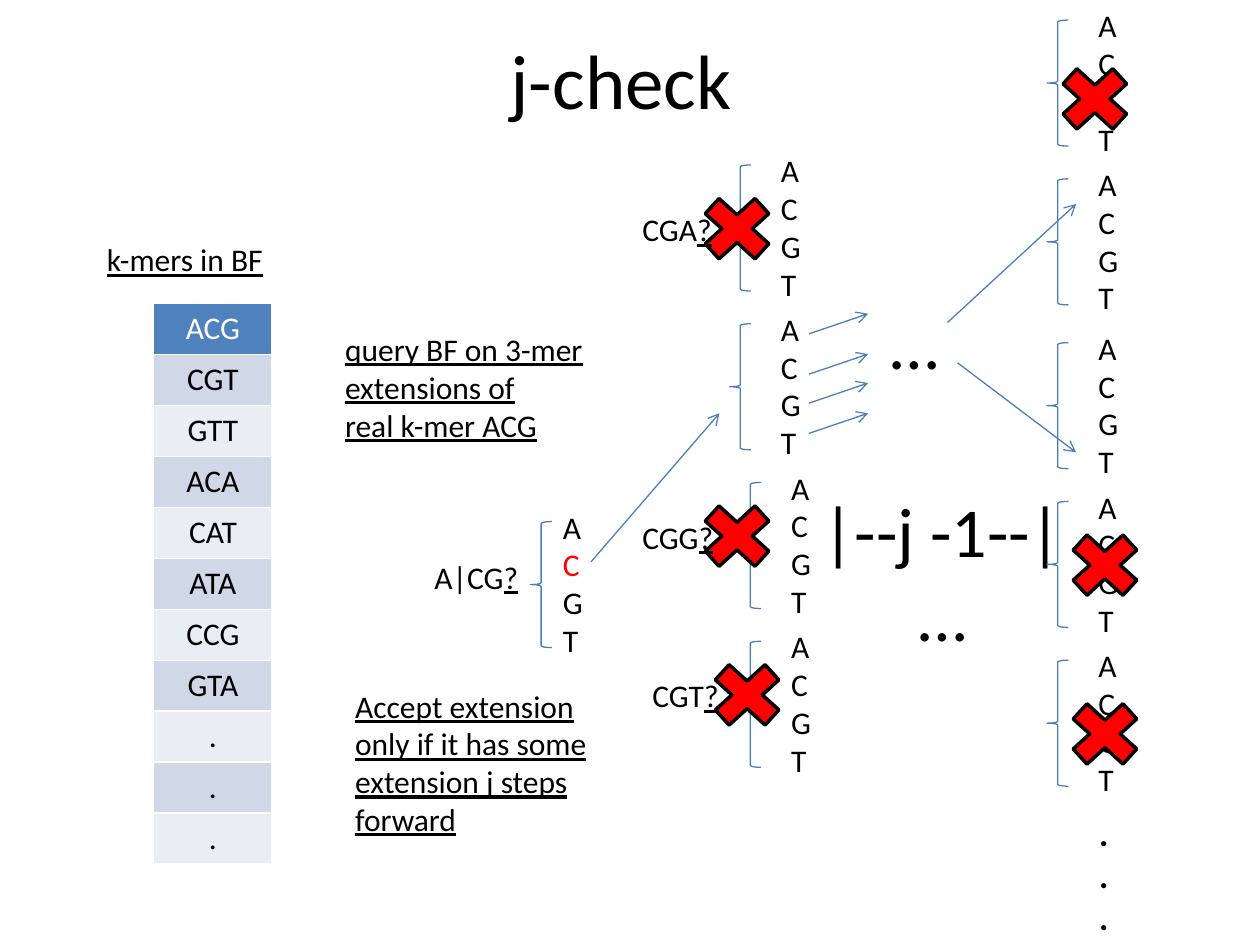
from lxml.etree import SubElement
from pptx import Presentation
from pptx.dml.color import RGBColor
from pptx.enum.shapes import MSO_CONNECTOR, MSO_SHAPE
from pptx.enum.text import MSO_ANCHOR, MSO_AUTO_SIZE, PP_ALIGN
from pptx.oxml.ns import qn
from pptx.util import Inches, Pt

BLACK = RGBColor(0x00, 0x00, 0x00)
WHITE = RGBColor(0xFF, 0xFF, 0xFF)
RED = RGBColor(0xFF, 0x00, 0x00)
LINE_BLUE = RGBColor(0x4B, 0x7E, 0xBC)
HEADER_BLUE = RGBColor(0x4F, 0x81, 0xBD)
BAND_DARK = RGBColor(0xD0, 0xD8, 0xE8)
BAND_LIGHT = RGBColor(0xE9, 0xED, 0xF4)

FONT = "Calibri"
COLUMNS, ROWS = 100, 75
SET_HEIGHT = 13.1
SET_PITCH = 12.6


def grid(*cells):
    """Turn counts of grid cells into lengths; the slide is COLUMNS by ROWS cells."""
    return [Inches(10 * cell / COLUMNS) for cell in cells]


def add_run(paragraph, text, size=18, color=BLACK, underline=False, bold=False):
    run = paragraph.add_run()
    run.text = text
    run.font.name = FONT
    run.font.size = Pt(size)
    run.font.color.rgb = color
    run.font.underline = underline
    run.font.bold = bold


def add_text(slide, box, lines, align=PP_ALIGN.LEFT, wrap=False, fill=None, **font):
    """Each line is a list of (text, font changes) runs or a plain string."""
    shape = slide.shapes.add_textbox(*grid(*box))
    if fill is not None:
        shape.fill.solid()
        shape.fill.fore_color.rgb = fill
    frame = shape.text_frame
    frame.word_wrap = wrap
    frame.auto_size = MSO_AUTO_SIZE.SHAPE_TO_FIT_TEXT
    for index, line in enumerate(lines):
        paragraph = frame.add_paragraph() if index else frame.paragraphs[0]
        paragraph.alignment = align
        for text, changes in [(line, {})] if isinstance(line, str) else line:
            add_run(paragraph, text, **{**font, **changes})


def add_query(slide, box, prefix):
    add_text(slide, box, [[(prefix, {}), ("?", {"underline": True})]])


def add_arrow(slide, start, end):
    arrow = slide.shapes.add_connector(MSO_CONNECTOR.STRAIGHT, *grid(*start, *end))
    arrow.line.color.rgb = LINE_BLUE
    arrow.line.width = Pt(0.75)
    SubElement(arrow.line._get_or_add_ln(), qn("a:tailEnd"), type="arrow")
    SubElement(arrow._element.spPr, qn("a:effectLst"))


def add_nucleotides(slide, left, top, indent=3.1, chosen=None):
    """Place the four letters with a brace at their left."""
    brace = slide.shapes.add_shape(MSO_SHAPE.LEFT_BRACE, *grid(left, top + 1.6, 1.7, 10))
    brace.shadow.inherit = False
    brace.fill.background()
    brace.line.color.rgb = LINE_BLUE
    brace.line.width = Pt(0.75)
    letters = [[(letter, {"color": RED if letter == chosen else BLACK})] for letter in "ACGT"]
    add_text(slide, (left + indent, top, 3.6, SET_HEIGHT), letters)


def add_cross(slide, left, top):
    cross = slide.shapes.add_shape(MSO_SHAPE.MATH_MULTIPLY, *grid(left, top, 7.6, 6.9))
    cross.shadow.inherit = False
    cross.fill.solid()
    cross.fill.fore_color.rgb = RED
    cross.line.color.rgb = BLACK
    cross.line.width = Pt(2)


def add_title(slide, box):
    title = slide.shapes.title
    title.left, title.top, title.width, title.height = grid(*box)
    title.text_frame.vertical_anchor = MSO_ANCHOR.MIDDLE
    paragraph = title.text_frame.paragraphs[0]
    paragraph.alignment = PP_ALIGN.CENTER
    add_run(paragraph, "j-check", size=44)


def add_kmer_table(slide, box):
    left, top, width, height = box
    add_text(slide, (left - 4.7, top - 5.5, 14.6, 4), ["k-mers in BF"], underline=True)
    kmers = ["ACG", "CGT", "GTT", "ACA", "CAT", "ATA", "CCG", "GTA", ".", ".", "."]
    table = slide.shapes.add_table(len(kmers), 1, *grid(*box)).table
    for index, kmer in enumerate(kmers):
        table.rows[index].height = grid(height / len(kmers))[0]
        cell = table.cell(index, 0)
        cell.fill.solid()
        band = BAND_DARK if index % 2 else BAND_LIGHT
        cell.fill.fore_color.rgb = band if index else HEADER_BLUE
        paragraph = cell.text_frame.paragraphs[0]
        paragraph.alignment = PP_ALIGN.CENTER
        add_run(paragraph, kmer, color=BLACK if index else WHITE)


def add_first_step(slide, left, top):
    """Place the two notes and the extensions of the real k-mer."""
    note = {"wrap": True, "fill": WHITE, "underline": True}
    add_text(slide, (left, top, 22.8, 10.1),
             ["query BF on 3-mer extensions of", "real k-mer ACG"], **note)
    add_text(slide, (left + 0.8, top + 28.3, 22.8, SET_HEIGHT),
             ["Accept extension only if it has some extension j steps forward"], **note)
    add_query(slide, (left + 7.1, top + 18.1, 8.7, 4), "A|CG")
    add_nucleotides(slide, left + 15.7, top + 14.1, indent=1.6, chosen="C")
    add_arrow(slide, (left + 20.5, top + 18.9), (left + 30.7, top + 7.1))


def add_second_step(slide, left, top):
    """Place the four sets of extensions, three of them rejected."""
    shifts = (0, 0, 0.8, 0.8)
    for index, shift in enumerate(shifts):
        add_nucleotides(slide, left + shift, top + index * SET_PITCH)
    rejected = [("CGA", 0, 3.2, 4.7, 7.5), ("CGG", 0, 27.6, 29.1, 7.7),
                ("CGT", 0.8, 40.2, 41.7, 7.3)]
    for prefix, shift, cross_top, label_top, width in rejected:
        add_cross(slide, left - 3.2 + shift, top + cross_top)
        add_query(slide, (left - 7.9 + shift, top + label_top, width, 4), prefix)


def add_skipped_steps(slide, left, top):
    """Place the arrows and ellipses that stand for the steps up to j."""
    for drop in (2.6, 5.8, 8.1, 10.5):
        add_arrow(slide, (left, top + drop), (left + 4.7, top + drop - 1.6))
    add_text(slide, (left + 5.5, top - 0.6, 5.9, 7.7), ["…"], size=40)
    add_arrow(slide, (left + 11, top + 1.7), (left + 21.2, top - 7.7))
    add_arrow(slide, (left + 11.8, top + 4.9), (left + 21.2, top + 12))
    add_text(slide, (left, top + 14.3, 21.2, 14.5), ["|--j -1--|", "…"],
             align=PP_ALIGN.CENTER, size=40)


def add_last_step(slide, left, top):
    """Place the five sets of extensions j steps on, three of them rejected."""
    for index in range(5):
        gap = 0.4 if index > 1 else 0
        add_nucleotides(slide, left, top + index * SET_PITCH + gap)
    for shift, drop in ((0, 4.4), (0.8, 41.4), (0.8, 54.8)):
        add_cross(slide, left + shift, top + drop)
    add_text(slide, (left + 3.1, top + 63.9, 2.8, 11.1), [".", ".", "."],
             align=PP_ALIGN.CENTER, size=20, bold=True)


def main():
    presentation = Presentation()
    presentation.slide_width, presentation.slide_height = grid(COLUMNS, ROWS)
    slide = presentation.slides.add_slide(presentation.slide_layouts[5])
    add_title(slide, (4.3, 0, 90, 12.5))
    add_kmer_table(slide, (12.2, 24.1, 9.4, 44.5))
    add_first_step(slide, 26.4, 25.7)
    add_second_step(slide, 57.9, 11.5)
    add_skipped_steps(slide, 64.2, 23.9)
    add_last_step(slide, 83.1, 0)
    presentation.save("out.pptx")


if __name__ == "__main__":
    main()
